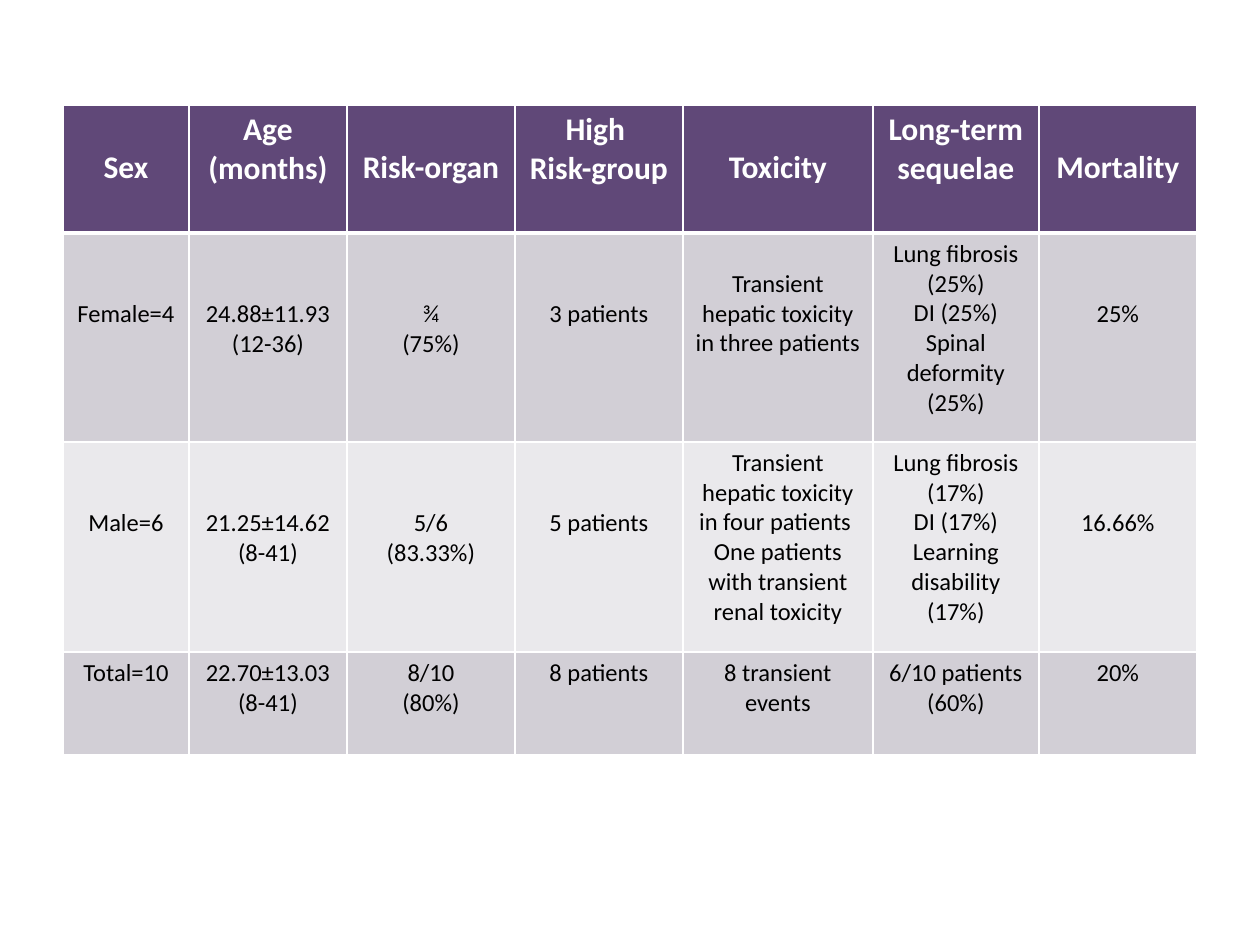
from dataclasses import dataclass

from lxml import etree
from pptx import Presentation
from pptx.dml.color import RGBColor
from pptx.enum.text import MSO_ANCHOR, PP_ALIGN
from pptx.oxml.ns import qn
from pptx.util import Emu, Pt

CENTER = PP_ALIGN.CENTER
TOP = MSO_ANCHOR.TOP
PX = 914400 // 126

# Content: each cell is (lines left free above the text, text)
ROWS = [
    [(1, "Sex"), (0, "Age\n(months)"), (1, "Risk-organ"), (0, "High \nRisk-group"),
     (1, "Toxicity"), (0, "Long-term sequelae"), (1, "Mortality")],
    [(2, "Female=4"), (2, "24.88±11.93\n(12-36)"), (2, "¾\n(75%)"), (2, "3 patients"),
     (1, "Transient hepatic toxicity in three patients"),
     (0, "Lung fibrosis (25%)\nDI (25%)\nSpinal deformity (25%)"), (2, "25%")],
    [(2, "Male=6"), (2, "21.25±14.62\n(8-41)"), (2, "5/6\n(83.33%)"), (2, "5 patients"),
     (0, "Transient hepatic toxicity in four patients \n"
         "One patients with transient renal toxicity"),
     (0, "Lung fibrosis (17%)\nDI (17%)\nLearning disability (17%)"), (2, "16.66%")],
    [(0, "Total=10"), (0, "22.70±13.03\n(8-41)"), (0, "8/10\n(80%)"), (0, "8 patients"),
     (0, "8 transient events"), (0, "6/10 patients\n(60%)"), (0, "20%")],
]

# Layout in px
SLIDE_SIZE = (1260, 945)
TABLE_LEFT, TABLE_TOP = 63, 105
COLUMN_WIDTHS = [126, 158, 168, 168, 190, 166, 158]
ROW_HEIGHTS = [128, 209, 210, 103]
CELL_MARGIN = 6


@dataclass(frozen=True)
class Theme:
    font: str = "Calibri"
    header_fill: str = "604878"
    bands: tuple = ("D2CFD6", "EAE9EC")
    header_text: str = "FFFFFF"
    body_text: str = "000000"
    border: str = "FFFFFF"
    header_size: int = 18
    body_size: int = 14
    header_line: int = 38  # line heights in px
    body_line: int = 30
    thin: int = 1
    thick: int = 3


THEME = Theme()


def px(value):
    return Emu(value * PX)


def set_borders(cell, top, bottom):
    properties = cell._tc.get_or_add_tcPr()
    widths = {"a:lnL": THEME.thin, "a:lnR": THEME.thin, "a:lnT": top, "a:lnB": bottom}
    for position, (tag, width) in enumerate(widths.items()):
        line = etree.Element(qn(tag), w=str(Pt(width)))
        fill = etree.SubElement(line, qn("a:solidFill"))
        etree.SubElement(fill, qn("a:srgbClr"), val=THEME.border)
        properties.insert(position, line)


def fill_cell(cell, row_index, free_lines, text):
    header = row_index == 0
    fill = THEME.header_fill if header else THEME.bands[(row_index - 1) % 2]
    color = THEME.header_text if header else THEME.body_text
    size = THEME.header_size if header else THEME.body_size
    line_height = THEME.header_line if header else THEME.body_line

    cell.fill.solid()
    cell.fill.fore_color.rgb = RGBColor.from_string(fill)
    set_borders(cell,
                top=THEME.thick if row_index == 1 else THEME.thin,
                bottom=THEME.thick if header else THEME.thin)
    cell.vertical_anchor = TOP
    cell.margin_top = px(CELL_MARGIN + free_lines * line_height)
    cell.margin_bottom = px(CELL_MARGIN)

    cell.text_frame.text = text
    for paragraph in cell.text_frame.paragraphs:
        paragraph.alignment = CENTER
        for run in paragraph.runs:
            run.font.name = THEME.font
            run.font.size = Pt(size)
            run.font.bold = header
            run.font.color.rgb = RGBColor.from_string(color)


def main():
    presentation = Presentation()
    presentation.slide_width, presentation.slide_height = map(px, SLIDE_SIZE)
    slide = presentation.slides.add_slide(presentation.slide_layouts.get_by_name("Blank"))

    # Patient outcome table
    table = slide.shapes.add_table(
        len(ROWS), len(COLUMN_WIDTHS), px(TABLE_LEFT), px(TABLE_TOP),
        px(sum(COLUMN_WIDTHS)), px(sum(ROW_HEIGHTS))).table
    for column, width in zip(table.columns, COLUMN_WIDTHS):
        column.width = px(width)
    for row_index, (row, height) in enumerate(zip(ROWS, ROW_HEIGHTS)):
        table.rows[row_index].height = px(height)
        for column_index, (free_lines, text) in enumerate(row):
            fill_cell(table.cell(row_index, column_index), row_index, free_lines, text)

    presentation.save("out.pptx")


if __name__ == "__main__":
    main()
